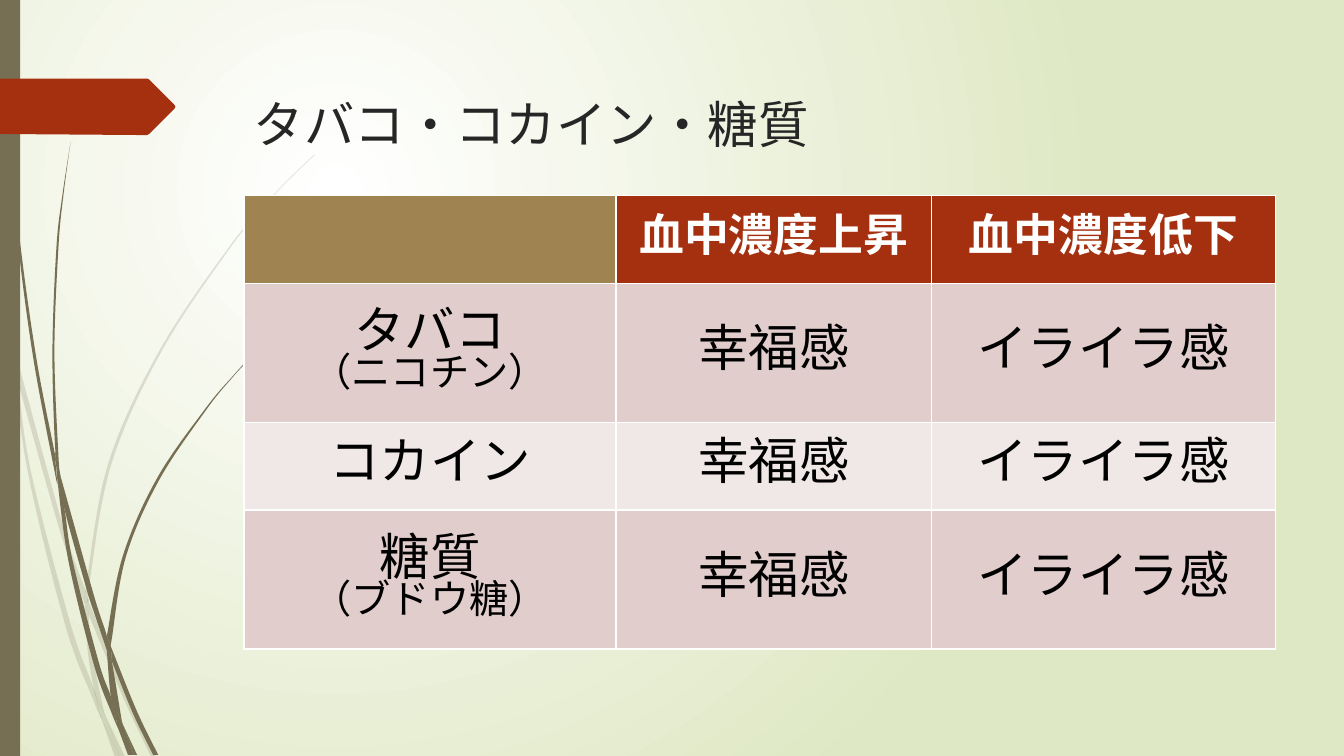
from pptx import Presentation
from pptx.dml.color import RGBColor
from pptx.enum.shapes import MSO_SHAPE as Preset
from pptx.enum.text import MSO_ANCHOR as Anchor, PP_ALIGN as Align
from pptx.oxml import parse_xml
from pptx.oxml.ns import nsdecls, qn
from pptx.util import Inches, Pt

WHITE = RGBColor(0xFF, 0xFF, 0xFF)
BLACK = RGBColor(0x00, 0x00, 0x00)
INK = RGBColor(0x26, 0x26, 0x26)
LIME = RGBColor(0xDF, 0xE8, 0xC4)
OLIVE = RGBColor(0x76, 0x6F, 0x54)
RUST = RGBColor(0xA5, 0x30, 0x10)
TAN = RGBColor(0x9F, 0x83, 0x51)
ROSE = RGBColor(0xE1, 0xCD, 0xCC)
BLUSH = RGBColor(0xF0, 0xE8, 0xE7)

PALE_GRASS = [
    ([(0.11, 3.5), (0.09, 3.22), (0, 2.82)], [(0, 2.99), (0.1, 3.44), (0.11, 3.5)]),
    ([(0.14, 3.45), (0.62, 5.2), (0.85, 5.86)],
     [(0.84, 5.99), (0.58, 5.22), (0.17, 3.76)]),
    ([(0.88, 5.96), (0.92, 6.07), (1.27, 6.92), (1.55, 7.51)],
     [(1.5, 7.51), (1.23, 6.94), (0.88, 6.1)]),
    ([(1.19, 7.51), (1.24, 7.51)], [(1.05, 7.11), (1.19, 7.51)]),
    ([(0.11, 3.5), (0.28, 4.7), (0.65, 6.21), (0.92, 6.93), (1.01, 7.14)],
     [(0.99, 7.07), (0.93, 6.83), (0.7, 6.19), (0.31, 4.69), (0.17, 3.76), (0.11, 3.5)]),
    ([(0.84, 5.99), (0.87, 6.46), (0.93, 6.83), (0.96, 6.92), (1.05, 7.11)],
     [(1.03, 7.06), (0.91, 6.46), (0.88, 6.1), (0.88, 6.08), (0.84, 5.99)]),
    ([(0.88, 5.96), (0.88, 5.84), (1.1, 4.62), (1.6, 3.49), (2.29, 2.45),
      (2.68, 1.98), (2.9, 1.75), (3.12, 1.54)],
     [(3.12, 1.53), (2.89, 1.75), (2.68, 1.97), (2.28, 2.44), (1.58, 3.48),
      (1.07, 4.61), (0.85, 5.84), (0.85, 5.86)]),
    ([(1.01, 7.14), (1.14, 7.51)], [(1.19, 7.51), (1.01, 7.14)]),
    ([(0.88, 6.08), (0.88, 6.1), (0.88, 5.96)], [(0.85, 5.86), (0.84, 5.99)]),
    ([(0.93, 6.83), (0.99, 7.07), (1.01, 7.14), (1.19, 7.51)],
     [(1.19, 7.51), (1.05, 7.11), (0.96, 6.92), (0.93, 6.83)]),
]
DARK_GRASS = [
    ([(0.04, 0), (0.05, 0.48), (0.08, 1.09), (0.19, 2.32), (0.36, 3.55),
      (0.55, 4.53), (0.55, 4.57), (0.57, 4.81)],
     [(0.56, 4.77), (0.33, 3.55), (0.17, 2.33), (0.07, 1.1), (0.04, 0.48), (0.03, 0)]),
    ([(0.6, 4.72), (0.93, 5.9), (1.06, 6.31), (1.06, 6.45)],
     [(0.88, 5.92), (0.64, 5.05), (0.6, 4.72)]),
    ([(1.1, 6.41), (1.13, 6.49), (1.36, 7.06), (1.57, 7.49)],
     [(1.52, 7.49), (1.32, 7.08), (1.11, 6.56)]),
    ([(0.57, 4.77), (0.68, 5.57), (0.93, 6.59), (1.11, 7.08), (1.17, 7.22)],
     [(1.16, 7.17), (1.1, 6.91), (0.98, 6.57), (0.72, 5.56), (0.64, 5.05), (0.57, 4.77)]),
    ([(0.6, 4.72), (0.58, 4.53), (0.54, 3.49), (0.58, 2.45), (0.63, 1.93), (0.7, 1.41)],
     [(0.7, 1.41), (0.62, 1.93), (0.56, 2.45), (0.52, 3.49), (0.55, 4.49), (0.6, 4.72)]),
    ([(1.33, 7.49), (1.36, 7.49)], [(1.22, 7.19), (1.33, 7.49)]),
    ([(0.57, 4.77), (0.64, 5.05)], [(0.6, 4.72), (0.55, 4.49), (0.55, 4.53)]),
    ([(1.1, 6.41), (1.11, 6.33), (1.25, 5.52), (1.58, 4.76), (2.05, 4.06),
      (2.31, 3.74), (2.45, 3.59), (2.61, 3.44)],
     [(2.6, 3.44), (2.45, 3.58), (2.31, 3.73), (2.04, 4.05), (1.56, 4.74),
      (1.22, 5.51), (1.06, 6.31)]),
    ([(1.17, 7.22), (1.27, 7.49)], [(1.31, 7.49), (1.17, 7.22)]),
    ([(1.06, 6.45), (1.1, 6.91), (1.16, 7.06), (1.22, 7.19)],
     [(1.21, 7.16), (1.11, 6.56), (1.09, 6.51), (1.06, 6.45)]),
    ([(1.06, 6.45), (1.09, 6.51), (1.11, 6.56)], [(1.1, 6.41), (1.06, 6.31)]),
    ([(1.1, 6.91), (1.16, 7.17), (1.17, 7.22), (1.3, 7.49)],
     [(1.33, 7.49), (1.22, 7.19), (1.16, 7.06), (1.1, 6.91)]),
]
RIBBON = [(0, 0.78), (1.46, 0.78), (1.48, 0.79), (1.73, 1.04), (1.74, 1.06),
          (1.73, 1.08), (1.48, 1.33), (1.46, 1.34), (1.36, 1.34), (0, 1.33)]
ROWS = [
    (0.87, TAN, [], RUST, ["血中濃度上昇", "血中濃度低下"]),
    (1.38, ROSE, ["タバコ", "（ニコチン）"], ROSE, ["幸福感", "イライラ感"]),
    (0.87, BLUSH, ["コカイン"], BLUSH, ["幸福感", "イライラ感"]),
    (1.38, ROSE, ["糖質", "（ブドウ糖）"], ROSE, ["幸福感", "イライラ感"]),
]


def bend(edge):
    ends = [edge[0], *edge, edge[-1]]
    points = [edge[0]]
    for a, b, c, d in zip(ends, ends[1:], ends[2:], ends[3:]):
        points.append(tuple(q + (r - p) / 6 for p, q, r in zip(a, b, c)))
        points.append(tuple(r - (s - q) / 6 for q, r, s in zip(b, c, d)))
        points.append(c)
    return points


class SlideMaker:
    font = "TeX Gyre Adventor"

    def __init__(self, page):
        self.page = page

    def background(self, inner, outer):
        fill = self.page.background.fill
        fill.gradient()
        for stop, color, place in zip(fill.gradient_stops, (inner, outer), (0, 1)):
            stop.color.rgb = color
            stop.position = place
        gradient = next(self.page.element.iter(qn("a:gradFill")))
        gradient.replace(gradient.find(qn("a:lin")), parse_xml(
            f'<a:path {nsdecls("a")} path="circle">'
            '<a:fillToRect l="50000" t="50000" r="100000" b="100000"/></a:path>'))

    def paint(self, shape, color, opacity=100):
        shape.shadow.inherit = False
        shape.fill.solid()
        shape.fill.fore_color.rgb = color
        shape.line.fill.background()
        if opacity < 100:
            tint = next(shape.element.spPr.iter(qn("a:srgbClr")))
            tint.append(parse_xml(f'<a:alpha {nsdecls("a")} val="{opacity * 1000}"/>'))

    def outline(self, shapes, points, color, opacity=100):
        start, *rest = [(Inches(x), Inches(y)) for x, y in points]
        builder = shapes.build_freeform(*start, scale=1.0)
        builder.add_line_segments(rest, close=True)
        shape = builder.convert_to_shape()
        self.paint(shape, color, opacity)
        return shape

    def blade(self, shapes, left, right, color, opacity):
        left, right = bend(left), bend(right)
        shape = self.outline(shapes, left + right, color, opacity)
        lines = list(shape.element.iter(qn("a:lnTo")))
        joint = len(left) - 1
        bends = lines[:joint] + lines[joint + 1:joint + len(right)]
        for first, second, third in zip(bends[::3], bends[1::3], bends[2::3]):
            curve = parse_xml(f'<a:cubicBezTo {nsdecls("a")}/>')
            first.addprevious(curve)
            for line in (first, second, third):
                curve.append(line[0])
                line.getparent().remove(line)

    def grass(self, blades, color, opacity=100):
        group = self.page.shapes.add_group_shape()
        for left, right in blades:
            self.blade(group.shapes, left, right, color, opacity)

    def bar(self, left, top, width, height, color):
        bounds = map(Inches, (left, top, width, height))
        self.paint(self.page.shapes.add_shape(Preset.RECTANGLE, *bounds), color)

    def span(self, para, text, size, color, bold=False):
        span = para.add_run()
        span.text = text
        font = span.font
        font.name, font.size, font.bold = self.font, Pt(size), bold
        font.color.rgb = color
        latin = next(para._p.r_lst[-1].iter(qn("a:latin")))
        latin.addnext(parse_xml(f'<a:ea {nsdecls("a")} typeface="{self.font}"/>'))

    def title(self, left, top, width, height, text):
        box = self.page.shapes.add_textbox(*map(Inches, (left, top, width, height)))
        box.text_frame.word_wrap = True
        self.span(box.text_frame.paragraphs[0], text, 36, INK)

    def cell(self, cell, lines, fill, sizes, color, bold):
        cell.vertical_anchor = Anchor.MIDDLE
        cell.fill.solid()
        cell.fill.fore_color.rgb = fill
        para = cell.text_frame.paragraphs[0]
        para.alignment = Align.CENTER
        for index, (line, size) in enumerate(zip(lines, sizes)):
            if index:
                para.add_line_break()
            self.span(para, line, size, color, bold)

    def table(self, left, top, widths, rows):
        height = sum(row[0] for row in rows)
        bounds = map(Inches, (left, top, sum(widths), height))
        table = self.page.shapes.add_table(len(rows), len(widths), *bounds).table
        for column, width in zip(table.columns, widths):
            column.width = Inches(width)
        for index, (height, label_fill, label, fill, words) in enumerate(rows):
            table.rows[index].height = Inches(height)
            header = index == 0
            sizes, color = ((32,), WHITE) if header else ((36, 28), BLACK)
            for column, lines in enumerate([label, *([word] for word in words)]):
                self.cell(table.cell(index, column), lines, fill if column else label_fill,
                          sizes, color, header)


def main():
    deck = Presentation()
    deck.slide_width, deck.slide_height = Inches(13.33), Inches(7.5)
    page = deck.slides.add_slide(deck.slide_layouts[6])
    maker = SlideMaker(page)
    maker.background(WHITE, LIME)
    maker.grass(PALE_GRASS, OLIVE, 20)
    maker.grass(DARK_GRASS, OLIVE)
    maker.bar(0, 0, 0.2, 7.5, OLIVE)
    maker.outline(page.shapes, RIBBON, RUST)
    maker.title(2.42, 0.87, 8.5, 0.84, "タバコ・コカイン・糖質")
    maker.table(2.42, 1.94, (3.69, 3.13, 3.41), ROWS)
    deck.save("out.pptx")


if __name__ == "__main__":
    main()
